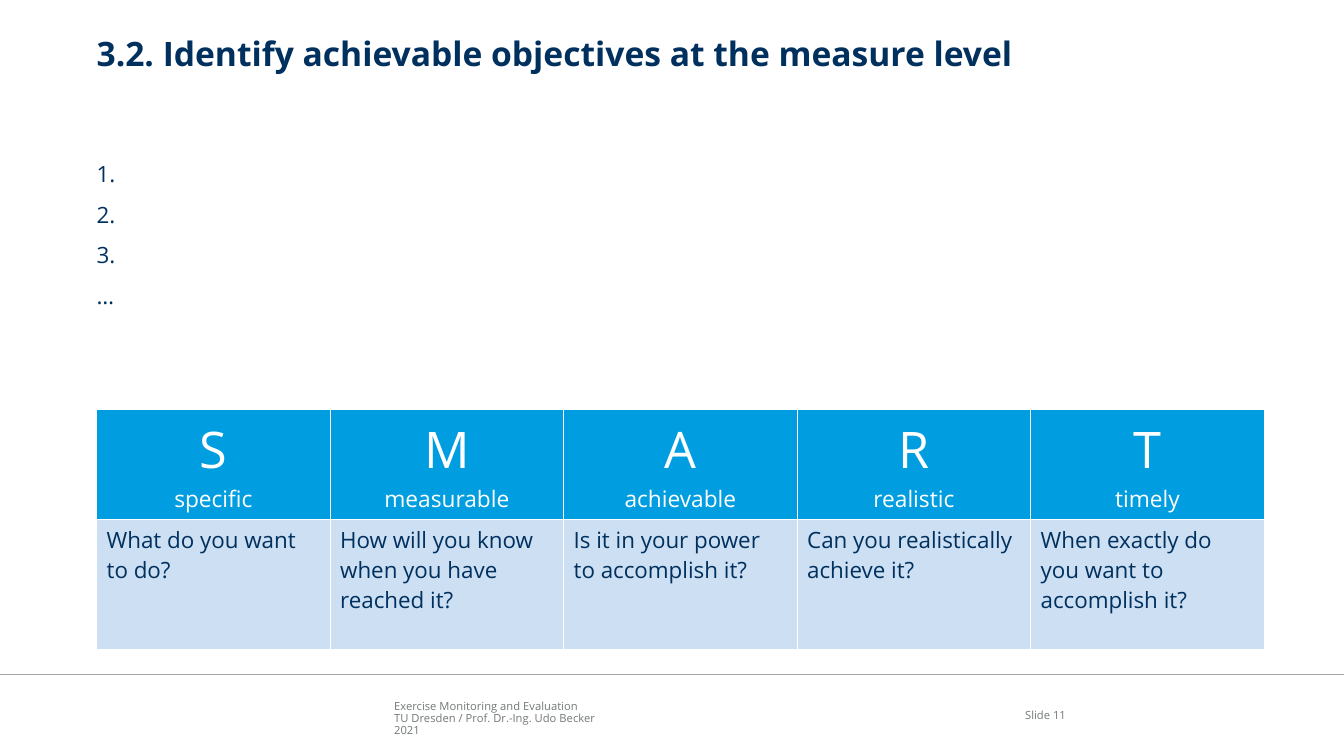
from lxml import etree
from pptx import Presentation
from pptx.dml.color import RGBColor
from pptx.enum.shapes import MSO_CONNECTOR
from pptx.enum.text import MSO_ANCHOR, MSO_AUTO_SIZE, PP_ALIGN
from pptx.oxml.ns import qn
from pptx.util import Pt

TOP, BOTTOM = MSO_ANCHOR.TOP, MSO_ANCHOR.BOTTOM
LEFT, CENTER, RIGHT = PP_ALIGN.LEFT, PP_ALIGN.CENTER, PP_ALIGN.RIGHT
FIXED = MSO_AUTO_SIZE.NONE
STRAIGHT = MSO_CONNECTOR.STRAIGHT

NAVY = RGBColor(0x00, 0x30, 0x5E)
CYAN = RGBColor(0x00, 0x9E, 0xE0)
PALE = RGBColor(0xCC, 0xDF, 0xF3)
WHITE = RGBColor(0xFF, 0xFF, 0xFF)
GREY = RGBColor(0x72, 0x78, 0x79)
RULE = RGBColor(0xA6, 0xA6, 0xA6)

FACE = "Open Sans"
TIGHT = 0.88
WIDTH, HEIGHT = 960, 540
MARGIN = 69

SMART = [
    ("S", "specific", "What do you want to do?"),
    ("M", "measurable", "How will you know when you have reached it?"),
    ("A", "achievable", "Is it in your power to accomplish it?"),
    ("R", "realistic", "Can you realistically achieve it?"),
    ("T", "timely", "When exactly do you want to accomplish it?"),
]


def assign(item, values):
    for name, value in values.items():
        setattr(item, name, value)


def style(para, size, color, bold=False, align=LEFT, spacing=TIGHT):
    assign(para, {"alignment": align, "line_spacing": spacing})
    assign(para.font, {"name": FACE, "size": Pt(size), "bold": bold})
    para.font.color.rgb = color


def write(frame, lines):
    """Put one paragraph per line into the frame and return them."""
    frame.text = "\n".join(lines)
    return frame.paragraphs


def prepare(frame, anchor=TOP):
    assign(frame, {"word_wrap": True, "auto_size": FIXED,
                   "vertical_anchor": anchor, "margin_left": 0,
                   "margin_top": 0, "margin_right": 0, "margin_bottom": 0})
    return frame


def add_box(slide, box, anchor=TOP):
    return prepare(slide.shapes.add_textbox(*map(Pt, box)).text_frame, anchor)


def add_title(slide, box, text):
    title = slide.shapes.title
    assign(title, dict(zip(("left", "top", "width", "height"), map(Pt, box))))
    style(write(prepare(title.text_frame), [text])[0], 24, NAVY, bold=True)


def number(para):
    props = para._p.get_or_add_pPr()
    props.set("marL", str(Pt(27)))
    props.set("indent", str(-Pt(27)))
    etree.SubElement(props, qn("a:buFont"), typeface="+mj-lt")
    etree.SubElement(props, qn("a:buAutoNum"), type="arabicPeriod")


def add_list(slide, box):
    paras = write(add_box(slide, box), [" ", " ", " ", "…"])
    for para in paras[:-1]:
        number(para)
    for para in paras:
        style(para, 16, NAVY)
    for para in paras[1:]:
        para.space_before = Pt(12)


def edge(cell):
    """Draw a thin white line on all four sides of the cell."""
    props = cell._tc.get_or_add_tcPr()
    for place, side in enumerate(("lnL", "lnR", "lnT", "lnB")):
        line = etree.Element(qn(f"a:{side}"), w=str(Pt(1)))
        fill = etree.SubElement(line, qn("a:solidFill"))
        etree.SubElement(fill, qn("a:srgbClr"), val=str(WHITE))
        props.insert(place, line)


def paint(cell, color):
    cell.fill.solid()
    cell.fill.fore_color.rgb = color
    edge(cell)


def add_smart(slide, box):
    left, top, width, height = box
    table = slide.shapes.add_table(2, len(SMART), *map(Pt, box)).table
    table.rows[0].height = Pt(75)
    table.rows[1].height = Pt(height - 75)
    for col, (letter, word, query) in enumerate(SMART):
        table.columns[col].width = Pt(width / len(SMART))
        head, body = table.cell(0, col), table.cell(1, col)
        paint(head, CYAN)
        paint(body, PALE)
        paras = write(head.text_frame, [letter, word])
        for para, size in zip(paras, (36, 16.2)):
            style(para, size, WHITE, align=CENTER, spacing=1.0)
        style(write(body.text_frame, [query])[0], 16, NAVY, spacing=1.0)


def add_footer(slide, box):
    left, top, width, height = box
    line = slide.shapes.add_connector(
        STRAIGHT, Pt(left), Pt(top), Pt(left + width), Pt(top))
    line.line.color.rgb = RULE
    line.line.width = Pt(1)
    etree.SubElement(line._element.spPr, qn("a:effectLst"))

    source = add_box(slide, (left + 281.5, top + 15, 408, 29), BOTTOM)
    for para in write(source, ["Exercise Monitoring and Evaluation",
                               "TU Dresden / Prof. Dr.-Ing. Udo Becker",
                               "2021"]):
        style(para, 8, GREY)
    page = add_box(slide, (left + 706, top + 15, 55.5, 18.5), BOTTOM)
    style(write(page, ["Slide 11"])[0], 8, GREY, align=RIGHT)


def main():
    deck = Presentation()
    assign(deck, {"slide_width": Pt(WIDTH), "slide_height": Pt(HEIGHT)})
    slide = deck.slides.add_slide(deck.slide_layouts[5])
    add_footer(slide, (0, 482, WIDTH, HEIGHT - 482))
    add_title(slide, (MARGIN, 27, 833, 54),
              "3.2. Identify achievable objectives at the measure level")
    add_list(slide, (MARGIN, 117, 833, 343))
    add_smart(slide, (MARGIN, 292.5, 834, 168))
    deck.save("out.pptx")


if __name__ == "__main__":
    main()
